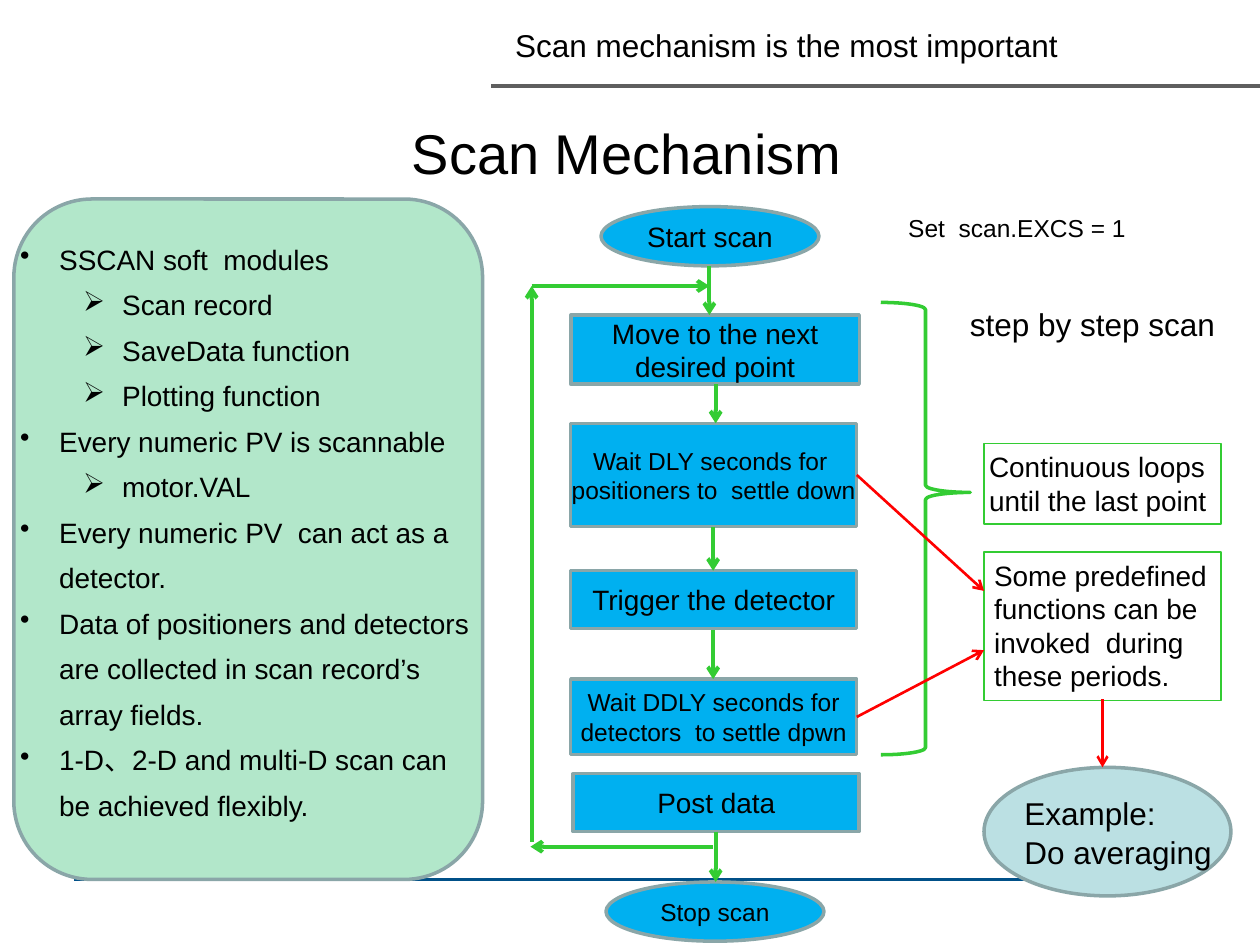
import pptx
import pptx.util
import pptx.dml.color
import pptx.enum.shapes
import pptx.enum.text
import pptx.oxml
import pptx.oxml.ns
from pptx.util import Inches

COLORS = {
    "text": "000000", "step": "00B0F0", "edge": "8AA6A8", "flow": "33CC33",
    "call": "FF0000", "panel": "00B050", "example": "BBE0E3",
    "top rule": "5F5F5F", "bottom rule": "005088",
}
SHAPE = pptx.enum.shapes.MSO_SHAPE
ALIGN = pptx.enum.text.PP_ALIGN
ANCHOR = pptx.enum.text.MSO_ANCHOR
NO_INSETS = (0, 0, 0, 0)
DEFAULT_INSETS = (0.1, 0.05, 0.1, 0.05)


def rgb(name):
    return pptx.dml.color.RGBColor.from_string(COLORS[name])


def add_xml(parent, tag, **attributes):
    child = pptx.oxml.parse_xml(f"<a:{tag} {pptx.oxml.ns.nsdecls('a')}/>")
    for key, value in attributes.items():
        child.set(key, value)
    parent.append(child)
    return child


class ScanSlide:
    font = "Arial"

    def __init__(self, slide):
        self.slide = slide

    def fill_text(self, frame, lines, size, align=ALIGN.LEFT, anchor=ANCHOR.TOP,
                  insets=DEFAULT_INSETS, wrap=True, spacing=None):
        """Each line is (bullet or None, left margin, text)."""
        frame.word_wrap = wrap
        frame.vertical_anchor = anchor
        (frame.margin_left, frame.margin_top,
         frame.margin_right, frame.margin_bottom) = map(Inches, insets)
        for number, (bullet, margin, words) in enumerate(lines):
            paragraph = frame.add_paragraph() if number else frame.paragraphs[0]
            paragraph.alignment = align
            if spacing:
                paragraph.line_spacing = pptx.util.Pt(spacing)
            if bullet:
                properties = paragraph._p.get_or_add_pPr()
                properties.set("marL", str(Inches(margin)))
                properties.set("indent", str(Inches(-0.31)))
                add_xml(properties, "buChar", char=bullet)
            run = paragraph.add_run()
            run.text = words
            run.font.size = pptx.util.Pt(size)
            run.font.name = self.font
            run.font.color.rgb = rgb("text")

    def text(self, box, lines, size, **style):
        if isinstance(lines, str):
            lines = [(None, 0, lines)]
        frame = self.slide.shapes.add_textbox(*map(Inches, box)).text_frame
        self.fill_text(frame, lines, size, **style)

    def shape(self, kind, box, fill=None, line="edge", width=2, opacity=None):
        shape = self.slide.shapes.add_shape(kind, *map(Inches, box))
        shape.shadow.inherit = False
        if fill:
            shape.fill.solid()
            shape.fill.fore_color.rgb = rgb(fill)
        else:
            shape.fill.background()
        if opacity:
            color = shape._element.spPr.find(".//" + pptx.oxml.ns.qn("a:srgbClr"))
            add_xml(color, "alpha", val=str(opacity * 1000))
        shape.line.color.rgb = rgb(line)
        shape.line.width = pptx.util.Pt(width)
        return shape

    def step(self, kind, box, words, size, insets=NO_INSETS):
        self.fill_text(self.shape(kind, box, "step").text_frame,
                       [(None, 0, words)], size, ALIGN.CENTER, ANCHOR.MIDDLE, insets)

    def note(self, box, words, insets):
        outline = self.shape(SHAPE.RECTANGLE, box, None, "flow", 0.75)
        self.fill_text(outline.text_frame, [(None, 0, words)], 16, insets=insets)

    def line(self, start, end, color, width=2.25, arrow=True):
        line = self.slide.shapes.add_connector(
            pptx.enum.shapes.MSO_CONNECTOR.STRAIGHT,
            *map(Inches, (*start, *end)))
        line.line.color.rgb = rgb(color)
        line.line.width = pptx.util.Pt(width)
        if arrow:
            add_xml(line._element.spPr.find(pptx.oxml.ns.qn("a:ln")),
                    "tailEnd", type="arrow")
        add_xml(line._element.spPr, "effectLst")


def main():
    deck = pptx.Presentation()
    deck.slide_width, deck.slide_height = Inches(10), Inches(7.5)
    scan = ScanSlide(deck.slides.add_slide(deck.slide_layouts[6]))

    # Rules and title
    scan.line((3.9, 0.68), (10, 0.68), "top rule", arrow=False)
    scan.line((0.59, 6.98), (9.41, 6.98), "bottom rule", arrow=False)
    scan.text((0.67, 0.84, 8.61, 0.73), "Scan Mechanism", 32,
              align=ALIGN.CENTER, anchor=ANCHOR.MIDDLE)

    # Green panel behind the list
    scan.shape(SHAPE.ROUNDED_RECTANGLE, (0.11, 1.58, 3.72, 5.4), "panel", opacity=30)

    # Flow chart steps
    for left, top, words, size in [(4.77, 1.64, "Start scan", 16),
                                   (4.81, 7, "Stop scan", 14)]:
        scan.step(SHAPE.OVAL, (left, top, 1.73, 0.47), words, size, DEFAULT_INSETS)
    for box, words, size in [
        ((4.53, 2.5, 2.29, 0.55), "Move to the next desired point", 16),
        ((4.53, 3.36, 2.27, 0.82),
         "Wait DLY seconds for  positioners to  settle down", 14),
        ((4.53, 4.53, 2.27, 0.46), "Trigger the detector", 16),
        ((4.53, 5.39, 2.27, 0.6),
         "Wait DDLY seconds for detectors  to settle dpwn", 14),
        ((4.55, 6.14, 2.27, 0.46), "Post data", 16),
    ]:
        scan.step(SHAPE.RECTANGLE, box, words, size)

    # Downward flow, then the loop back to the first step
    for x, top, bottom in [(5.63, 2.11, 2.5), (5.68, 3.05, 3.36),
                           (5.66, 4.18, 4.53), (5.66, 5, 5.39), (5.68, 6.6, 7)]:
        scan.line((x, top), (x, bottom), "flow")
    for start, end in [((5.66, 6.72), (4.21, 6.72)),
                       ((4.22, 6.68), (4.22, 2.27)),
                       ((4.22, 2.27), (5.63, 2.27))]:
        scan.line(start, end, "flow")

    # Brace around the repeated steps
    brace = scan.shape(SHAPE.LEFT_BRACE, (6.99, 2.4, 0.71, 3.59), None, "flow")
    brace.rotation = 180
    brace.adjustments[0], brace.adjustments[1] = 0.08, 0.58

    # Notes and the averaging example
    scan.note((7.81, 3.52, 1.88, 0.64), "Continuous loops until the last point",
              (0.04, 0.05, 0.04, 0.05))
    scan.note((7.81, 4.38, 1.88, 1.18),
              "Some predefined functions can be invoked  during these periods.",
              (0.08, 0.05, 0, 0.05))
    scan.shape(SHAPE.OVAL, (7.81, 6.09, 1.96, 1.02), "example")
    for start, end in [((6.8, 3.77), (7.81, 4.69)),
                       ((6.8, 5.69), (7.81, 5.16)),
                       ((8.75, 5.55), (8.75, 6.09))]:
        scan.line(start, end, "call", 1.5)
    scan.text((8.13, 6.3, 1.56, 0.61),
              [(None, 0, "Example:"), (None, 0, "Do averaging")], 18,
              insets=NO_INSETS, spacing=22)

    # Captions
    scan.text((3.99, 0.16, 4.55, 0.4), "Scan mechanism is the most important",
              18, wrap=False)
    scan.text((7.11, 1.64, 2, 0.34), "Set  scan.EXCS = 1", 14, wrap=False)
    scan.text((7.6, 2.37, 2.17, 0.4), "step by step scan", 18)

    # Feature list
    main_point, sub_point = ("•", 0.31), ("➢", 0.81)
    features = [
        (*main_point, "SSCAN soft  modules"),
        (*sub_point, "Scan record"),
        (*sub_point, "SaveData function"),
        (*sub_point, "Plotting function"),
        (*main_point, "Every numeric PV is scannable"),
        (*sub_point, "motor.VAL"),
        (*main_point, "Every numeric PV  can act as a detector."),
        (*main_point, "Data of positioners and detectors are collected in "
                      "scan record’s array fields."),
        (*main_point, "1-D、2-D and multi-D scan can be achieved flexibly."),
    ]
    scan.text((0.16, 1.83, 3.59, 4.7), features, 16, insets=NO_INSETS, spacing=26)

    deck.save("out.pptx")


if __name__ == "__main__":
    main()
